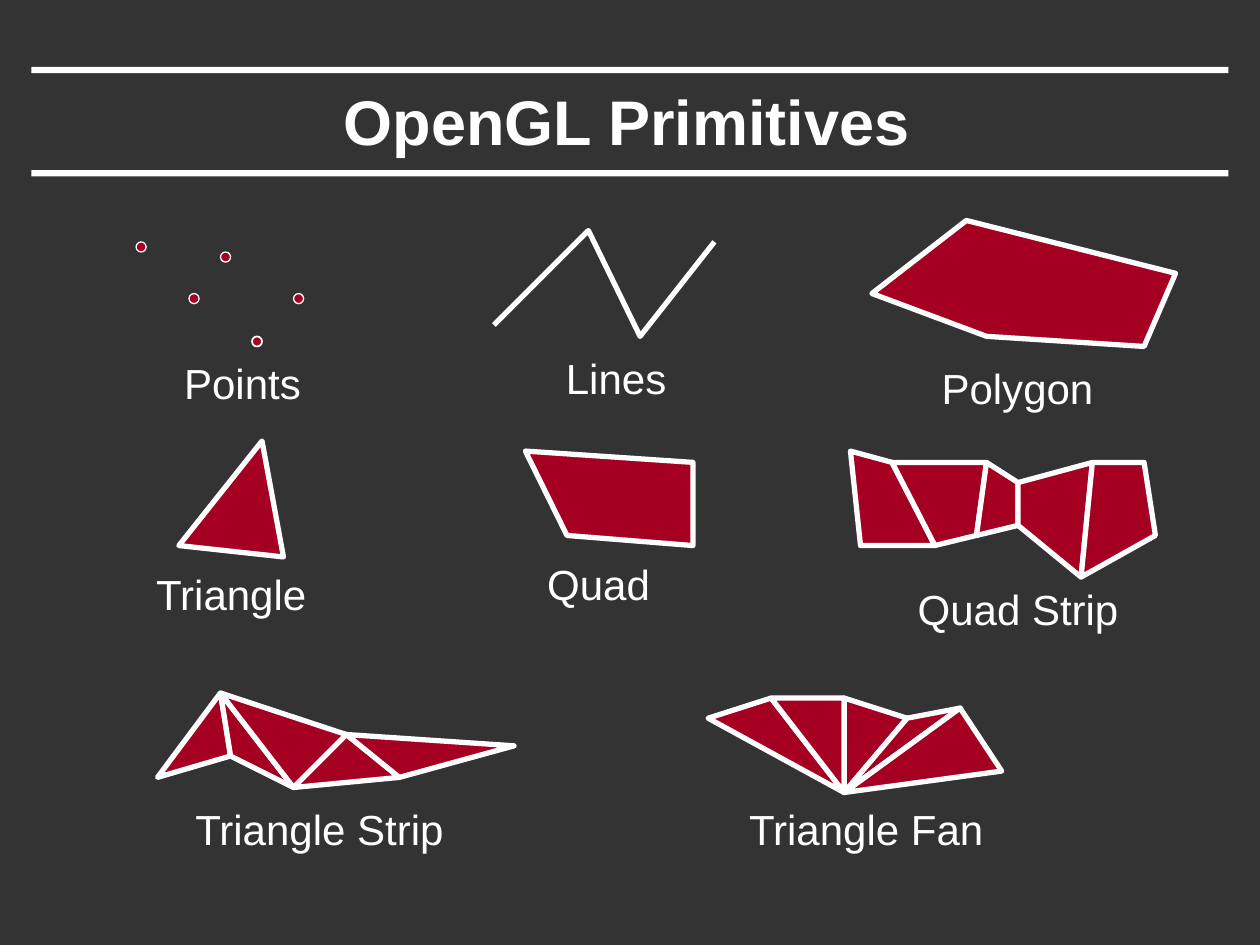
from lxml.etree import SubElement
from pptx import Presentation
from pptx.dml.color import RGBColor
from pptx.enum.shapes import MSO_SHAPE
from pptx.enum.text import MSO_ANCHOR, MSO_AUTO_SIZE, PP_ALIGN
from pptx.oxml.ns import qn
from pptx.util import Inches, Pt

BACKGROUND, WHITE, CRIMSON = "333333", "FFFFFF", "A50021"
DOT_SIZE = 0.08

# Text: left, top, width
LABELS = {
    "Points": (1.36, 2.79, 1.13),
    "Lines": (4.39, 2.75, 1),
    "Polygon": (7.37, 2.83, 1.41),
    "Triangle": (1.13, 4.46, 1.41),
    "Quad": (4.24, 4.38, 1.02),
    "Quad Strip": (7.18, 4.58, 1.8),
    "Triangle Strip": (1.44, 6.33, 2.19),
    "Triangle Fan": (5.84, 6.33, 2.07),
}
# Left, top, outline width
POINTS = [(1.08, 1.92, 0.75), (1.75, 2, 0.75), (1.5, 2.33, 0.75),
          (2.33, 2.33, 0.75), (2, 2.67, 1)]
LINES = [(3.92, 2.58), (4.67, 1.83), (5.08, 2.67), (5.67, 1.92)]
POLYGON = [(6.92, 2.33), (7.67, 1.75), (9.33, 2.17), (9.08, 2.75), (7.83, 2.67)]
TRIANGLE = [(1.42, 4.33), (2.08, 3.5), (2.25, 4.42)]
QUAD = [(4.17, 3.58), (4.5, 4.25), (5.5, 4.33), (5.5, 3.67)]
QUAD_STRIP_TOP = [(6.75, 3.58), (7.08, 3.67), (7.83, 3.67),
                  (8.08, 3.83), (8.67, 3.67), (9.08, 3.67)]
QUAD_STRIP_BOTTOM = [(6.83, 4.33), (7.42, 4.33), (7.75, 4.25),
                     (8.08, 4.17), (8.58, 4.58), (9.17, 4.25)]
TRIANGLE_STRIP = [(1.25, 6.17), (1.83, 6), (1.75, 5.5), (2.33, 6.25),
                  (2.75, 5.83), (3.17, 6.17), (4.08, 5.92)]
FAN_HUB = (6.7, 6.29)
FAN_RIM = [(5.62, 5.7), (6.12, 5.54), (6.7, 5.54),
           (7.2, 5.7), (7.62, 5.62), (7.95, 6.12)]


def color(hex_value):
    return RGBColor.from_string(hex_value)


def paint(shape, fill, line_width):
    """Set fill and white outline; None leaves either one out."""
    shape.shadow.inherit = False
    if fill:
        shape.fill.solid()
        shape.fill.fore_color.rgb = color(fill)
    else:
        shape.fill.background()
    if line_width:
        shape.line.color.rgb = color(WHITE)
        shape.line.width = Pt(line_width)
    else:
        shape.line.fill.background()


def write(frame, text, size, bold=False):
    frame.text = text
    paragraph = frame.paragraphs[0]
    paragraph.alignment = PP_ALIGN.CENTER
    paragraph.font.color.rgb = color(WHITE)
    for name, value in {"name": "Arial", "size": Pt(size), "bold": bold}.items():
        setattr(paragraph.runs[0].font, name, value)
    paragraph.runs[0].font.color.rgb = color(WHITE)


def add_title(slide, text):
    title = slide.shapes.title
    box = {"left": 0.74, "top": 0.58, "width": 8.47, "height": 0.75}
    for name, value in box.items():
        setattr(title, name, Inches(value))
    write(title.text_frame, text, 36, bold=True)
    title.text_frame.vertical_anchor = MSO_ANCHOR.MIDDLE
    title.text_frame.auto_size = MSO_AUTO_SIZE.NONE


def add_preset(slide, preset, left, top, width, height, fill, line_width=None):
    shape = slide.shapes.add_shape(
        preset, Inches(left), Inches(top), Inches(width), Inches(height))
    paint(shape, fill, line_width)


def add_label(slide, text, left, top, width):
    label = slide.shapes.add_textbox(
        Inches(left), Inches(top), Inches(width), Inches(0.5))
    write(label.text_frame, text, 24)
    label.text_frame.word_wrap = False
    label.text_frame.auto_size = MSO_AUTO_SIZE.SHAPE_TO_FIT_TEXT


def add_outline(slide, vertices, closed=True):
    """Draw a filled face, or an unfilled open line, with round joins."""
    start, *rest = [(Inches(x), Inches(y)) for x, y in vertices]
    builder = slide.shapes.build_freeform(*start)
    builder.add_line_segments(rest, close=closed)
    outline = builder.convert_to_shape()
    paint(outline, CRIMSON if closed else None, 3)
    SubElement(outline.line._get_or_add_ln(), qn("a:round"))
    return outline


def quad_strip_faces(top, bottom):
    return [(top[i], bottom[i], bottom[i + 1], top[i + 1])
            for i in range(len(top) - 1)]


def triangle_strip_faces(vertices):
    return [vertices[i:i + 3] for i in range(len(vertices) - 2)]


def triangle_fan_faces(hub, rim):
    return [(hub, *edge) for edge in zip(rim, rim[1:])]


def main():
    presentation = Presentation()
    presentation.slide_width, presentation.slide_height = Inches(10), Inches(7.5)
    slide = presentation.slides.add_slide(presentation.slide_layouts[5])
    slide.background.fill.solid()
    slide.background.fill.fore_color.rgb = color(BACKGROUND)

    for rule_top in (1.35, 0.53):
        add_preset(slide, MSO_SHAPE.RECTANGLE, 0.25, rule_top, 9.5, 0.05, WHITE)
    add_title(slide, "OpenGL Primitives")
    for text, place in LABELS.items():
        add_label(slide, text, *place)

    for left, top, line_width in POINTS:
        add_preset(slide, MSO_SHAPE.OVAL, left, top, DOT_SIZE, DOT_SIZE,
                   CRIMSON, line_width)
    add_outline(slide, LINES, closed=False)
    for face in (POLYGON, TRIANGLE, QUAD):
        add_outline(slide, face)
    quads = quad_strip_faces(QUAD_STRIP_TOP, QUAD_STRIP_BOTTOM)
    slide.shapes.add_group_shape([add_outline(slide, quad) for quad in quads])
    for face in (triangle_strip_faces(TRIANGLE_STRIP)
                 + triangle_fan_faces(FAN_HUB, FAN_RIM)):
        add_outline(slide, face)

    presentation.save("out.pptx")


if __name__ == "__main__":
    main()
